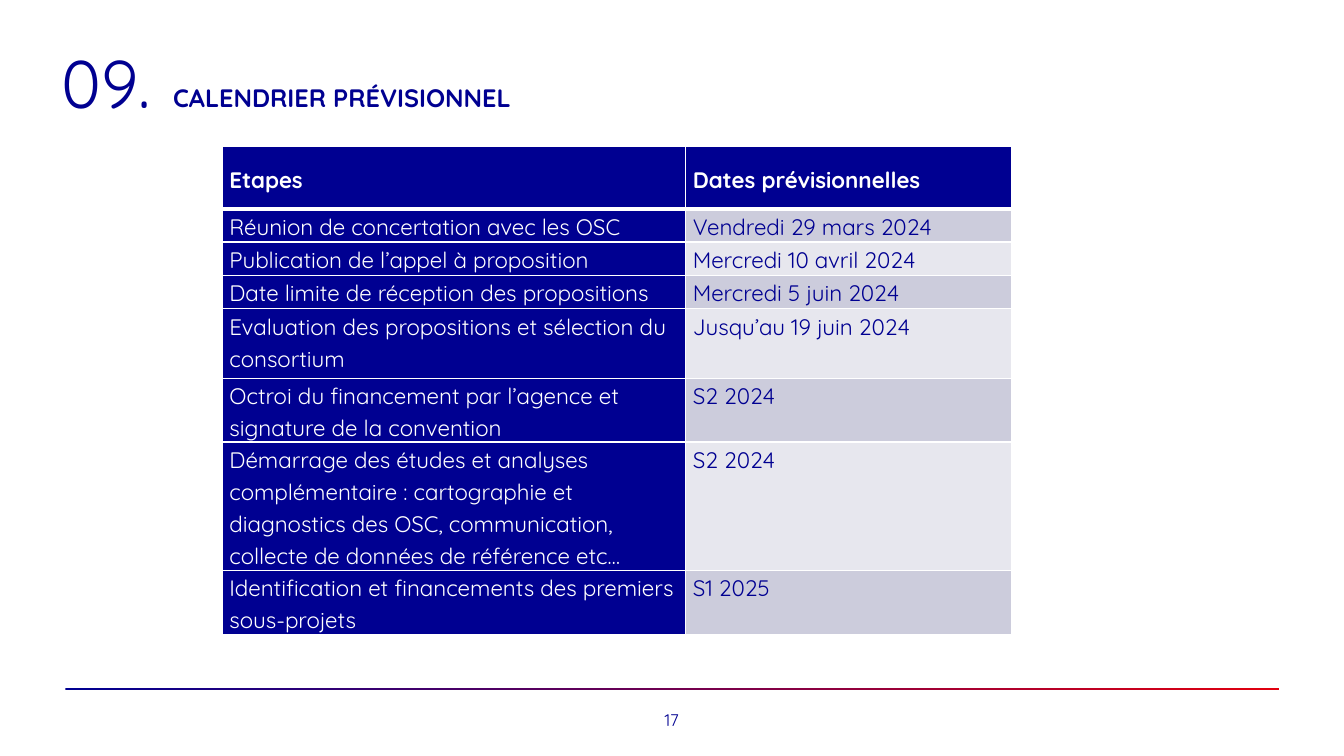
import pptx
import pptx.util
import pptx.oxml
import pptx.oxml.ns
import pptx.dml.color
import pptx.enum.shapes
import pptx.enum.text

Cm = pptx.util.Cm
Pt = pptx.util.Pt
RGBColor = pptx.dml.color.RGBColor
Anchor = pptx.enum.text.MSO_ANCHOR
Align = pptx.enum.text.PP_ALIGN

BLUE = RGBColor(0x00, 0x00, 0x91)
RED = RGBColor(0xE1, 0x00, 0x0F)
WHITE = RGBColor(0xFF, 0xFF, 0xFF)
DARK = RGBColor(0xCC, 0xCC, 0xDC)
LIGHT = RGBColor(0xE7, 0xE7, 0xEE)


def write(frame, text, size, color, bold=False, align=Align.LEFT):
    """Fill a text frame with one paragraph and return it."""
    frame.word_wrap = True
    para = frame.paragraphs[0]
    para.text = text
    para.alignment = align
    font = para.font
    font.name = "Quicksand"
    font.size = Pt(size)
    font.bold = bold
    font.color.rgb = color
    return para


def edge(cell, side, width):
    """Draw a white border on one side (L, R, T or B) of a cell."""
    props = cell._tc.get_or_add_tcPr()
    props.append(pptx.oxml.parse_xml(
        f'<a:ln{side} {pptx.oxml.ns.nsdecls("a")} w="{Pt(width)}">'
        f'<a:solidFill><a:srgbClr val="{WHITE}"/></a:solidFill></a:ln{side}>'))


deck = pptx.Presentation()
deck.slide_width = Cm(33.87)
deck.slide_height = Cm(19.05)
slide = deck.slides.add_slide(deck.slide_layouts[5])
shapes = slide.shapes

# Title and section number
title = shapes.title
title.left, title.top = Cm(4.11), Cm(1.17)
title.width, title.height = Cm(28.09), Cm(1.8)
frame = title.text_frame
frame.auto_size = pptx.enum.text.MSO_AUTO_SIZE.NONE
frame.vertical_anchor = Anchor.BOTTOM
write(frame, "CALENDRIER PRÉVISIONNEL", 18, BLUE, True)

number = shapes.add_textbox(Cm(1.3), Cm(0.91), Cm(3.51), Cm(2.49))
write(number.text_frame, "09.", 48, BLUE)

# Footer
rule = shapes.add_shape(pptx.enum.shapes.MSO_SHAPE.RECTANGLE,
                        Cm(1.65), Cm(17.35), Cm(30.58), Cm(0.05))
rule.shadow.inherit = False
rule.line.fill.background()
rule.fill.gradient()
rule.fill.gradient_angle = 0
for stop, color in zip(rule.fill.gradient_stops, (BLUE, RED)):
    stop.color.rgb = color

page = shapes.add_textbox(Cm(16.18), Cm(17.7), Cm(1.5), Cm(0.89))
page.text_frame.vertical_anchor = Anchor.MIDDLE
write(page.text_frame, "17", 12, BLUE, align=Align.CENTER)

# Schedule: step, date, row height in cm
steps = [
    ("Etapes", "Dates prévisionnelles", 1.57),
    ("Réunion de concertation avec les OSC", "Vendredi 29 mars 2024", 0.84),
    ("Publication de l’appel à proposition", "Mercredi 10 avril 2024", 0.84),
    ("Date limite de réception des propositions", "Mercredi 5 juin 2024", 0.84),
    ("Evaluation des propositions et sélection du consortium",
     "Jusqu’au 19 juin 2024", 1.75),
    ("Octroi du financement par l’agence et signature de la convention",
     "S2 2024", 1.61),
    ("Démarrage des études et analyses complémentaire : cartographie et "
     "diagnostics des OSC, communication, collecte de données de référence etc…",
     "S2 2024", 3.23),
    ("Identification et financements des premiers sous-projets",
     "S1 2025", 1.61),
]
total = sum(step[2] for step in steps)
table = shapes.add_table(len(steps), 2, Cm(5.6), Cm(3.69),
                         Cm(19.9), Cm(total)).table
table.columns[0].width = Cm(11.68)
table.columns[1].width = Cm(8.22)

for row, (*texts, height) in enumerate(steps):
    table.rows[row].height = Cm(height)
    head = row == 0
    for col, text in enumerate(texts):
        cell = table.cell(row, col)
        cell.margin_left = cell.margin_right = Cm(0.18)
        cell.margin_top = cell.margin_bottom = 0
        cell.vertical_anchor = Anchor.MIDDLE if head else Anchor.TOP
        for side in "LRTB":
            thick = (row, side) in ((0, "B"), (1, "T"))
            edge(cell, side, 3 if thick else 1)
        solid = head or col == 0
        cell.fill.solid()
        cell.fill.fore_color.rgb = BLUE if solid else DARK if row % 2 else LIGHT
        para = write(cell.text_frame, text, 16, WHITE if solid else BLUE, head)
        para.line_spacing = 1.15

deck.save("out.pptx")
